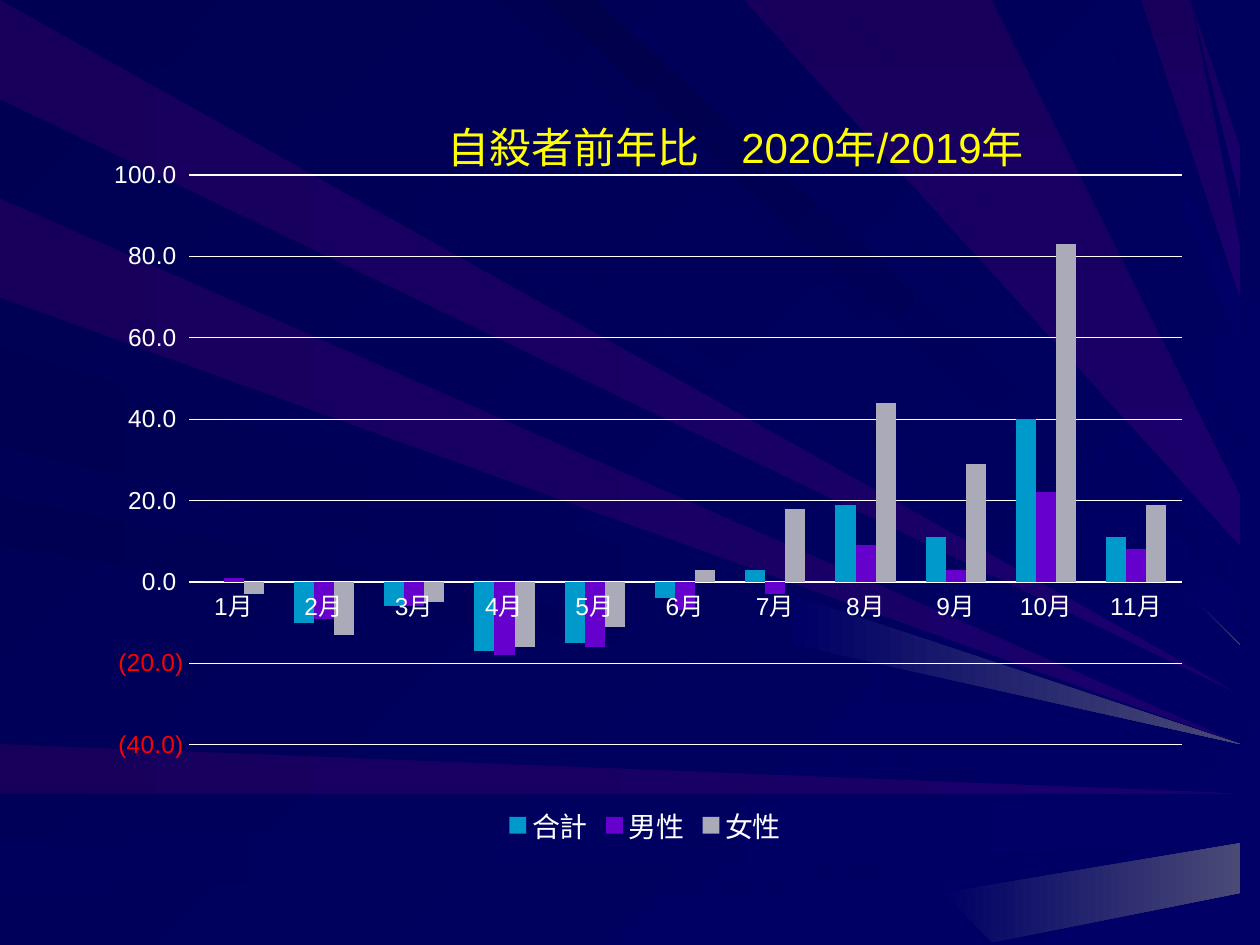
from lxml.etree import SubElement
from pptx import Presentation
from pptx.chart.data import CategoryChartData
from pptx.dml.color import RGBColor
from pptx.enum.chart import XL_CHART_TYPE as ChartType, XL_LEGEND_POSITION as LegendPosition
from pptx.enum.chart import XL_TICK_MARK as TickMark
from pptx.oxml import parse_xml
from pptx.oxml.ns import nsdecls, qn
from pptx.util import Cm, Pt

TITLE = "自殺者前年比　2020年/2019年"
MONTHS = [f"{month}月" for month in range(1, 12)]
FONT = "Arial"
WHITE = RGBColor.from_string("FFFFFF")
YELLOW = RGBColor.from_string("FFFF00")
BLUE = RGBColor.from_string("0099CC")
PURPLE = RGBColor.from_string("6600CC")
GREY = RGBColor.from_string("AAAAB8")
INK = RGBColor.from_string("00004B")
NIGHT = RGBColor.from_string("000052")
DUSK = RGBColor.from_string("00005C")
NAVY = RGBColor.from_string("000066")
PLUM = RGBColor.from_string("16005C")
VIOLET = RGBColor.from_string("1A006C")
HAZE = RGBColor.from_string("4A4A77")

CHANGES = [
    ("合計", BLUE, (0, -10, -6, -17, -15, -4, 3, 19, 11, 40, 11)),
    ("男性", PURPLE, (1, -9, -6, -18, -16, -7, -3, 9, 3, 22, 8)),
    ("女性", GREY, (-3, -13, -5, -16, -11, 3, 18, 44, 29, 83, 19)),
]

WIDTH, HEIGHT = 25.4, 19.05
# Each ray: colour, its span in cm on the starting edge, its span in cm on the right edge.
RAYS = {
    "left": [
        (PLUM, 0.05, 2.36, 14.45, 14.48),
        (PLUM, 4.04, 5.79, 14.83, 14.86),
        (PLUM, 15.14, 15.82, 16.03, 16.05),
        (DUSK, 16.89, 17.88, 16.33, 16.54),
        (DUSK, 18.67, 19.05, 16.81, 16.82),
        (INK, 6.55, 6.86, 14.95, 14.96),
        (NIGHT, 7.06, 8.69, 15.14, 15.29),
        (NIGHT, 9.5, 11.1, 15.37, 15.39),
        (DUSK, 14.02, 14.22, 15.77, 15.82),
    ],
    "top": [
        (NIGHT, 0.66, 2.57, 14.27, 14.3),
        (NIGHT, 10.11, 10.57, 13.08, 13.23),
        (INK, 10.82, 12.5, 12.17, 12.88),
        (INK, 13.72, 14.02, 11.75, 11.76),
        (PLUM, 15.39, 16.79, 11.3, 11.33),
        (PLUM, 22.53, 23.62, 4.65, 6.02),
        (PLUM, 23.85, 24.49, 2.9, 4.24),
        (INK, 5.72, 6.27, 13.89, 14.02),
        (DUSK, 14.66, 14.94, 11.51, 11.53),
        (PLUM, 17.42, 19.56, 9.91, 10.87),
        (NIGHT, 19.94, 20.12, 8.99, 9.14),
        (DUSK, 20.7, 20.93, 8.51, 8.53),
        (DUSK, 21.97, 22.15, 6.32, 6.55),
    ],
}
# Each tip: starting edge, the four spans of its ray, the share left dark on either side.
HAZY_TIPS = [
    ("bottom", 9.25, 18.85, 17.07, 17.63, 0.62, 0.23),
    ("top", 10.11, 10.57, 13.08, 13.23, 0.9, 0.9),
    ("left", 7.19, 8.81, 15.27, 15.39, 0.63, 0.63),
]


def start_point(edge, place):
    return {"left": (0, place), "top": (place, 0), "bottom": (place, HEIGHT)}[edge]


def along(start, end, share):
    return tuple(a + (b - a) * share for a, b in zip(start, end))


def paint(fill, start, end, angle):
    fill.gradient()
    fill.gradient_angle = (360 - angle) % 360
    for stop, color in zip(fill.gradient_stops, (start, end)):
        stop.color.rgb = color


def draw_ray(edge, near, far, upper, lower, colors, angle, skip=(0, 0)):
    if edge == "top":
        near, far = far, near
    ends = [(WIDTH, upper), (WIDTH, lower)]
    starts = [
        along(start_point(edge, place), end, share)
        for place, end, share in zip((near, far), ends, skip)
    ]
    corners = [starts[0], *ends, starts[1]]
    outline = slide.shapes.build_freeform(*corners[0], scale=Cm(1))
    outline.add_line_segments(corners[1:], close=True)
    ray = outline.convert_to_shape()
    ray.shadow.inherit = False
    ray.line.fill.background()
    paint(ray.fill, *colors, angle)


def style(font, size, color=WHITE):
    font.name, font.size, font.bold = FONT, Pt(size), False
    font.color.rgb = color


def draw_line(line):
    line.color.rgb = WHITE
    line.width = Pt(0.75)


def set_layout(parent, position, **settings):
    layout = parent.find(qn("c:layout"))
    if layout is None:
        layout = parse_xml(f"<c:layout {nsdecls('c')}/>")
        parent.insert(position, layout)
    manual = SubElement(layout, qn("c:manualLayout"))
    for tag, value in settings.items():
        SubElement(manual, qn(f"c:{tag}")).set("val", str(value))


deck = Presentation()
deck.slide_width, deck.slide_height = Cm(WIDTH), Cm(HEIGHT)
slide = deck.slides.add_slide(deck.slide_layouts[6])
paint(slide.background.fill, NIGHT, NAVY, 45)

for edge, rays in RAYS.items():
    for color, *spans in rays:
        violet = color == PLUM
        angle = 0 if edge == "left" else 90 if violet else 45
        draw_ray(edge, *spans, (color, VIOLET if violet else NAVY), angle)
for edge, *spans, upper_share, lower_share in HAZY_TIPS:
    draw_ray(edge, *spans, (NAVY, HAZE), 0, (upper_share, lower_share))

changes = CategoryChartData(number_format="0")
changes.categories = MONTHS
for name, color, values in CHANGES:
    changes.add_series(name, values)
chart = slide.shapes.add_chart(
    ChartType.COLUMN_CLUSTERED, Cm(1.5), Cm(0.74), Cm(23.01), Cm(16.41), changes
).chart
style(chart.font, 10)

heading = chart.chart_title
heading.text_frame.text = TITLE
style(heading.text_frame.paragraphs[0].runs[0].font, 24, YELLOW)
heading.include_in_layout = False
set_layout(heading._element, 1, xMode="edge", yMode="edge", x=0.32, y=0.08)
set_layout(chart._chartSpace.chart.plotArea, 0, layoutTarget="inner",
           xMode="edge", yMode="edge", x=0.1, y=0.17, w=0.87, h=0.7)

columns = chart.plots[0]
columns.gap_width, columns.overlap = 150, 0
columns.vary_by_categories = False
for series, (name, color, values) in zip(columns.series, CHANGES):
    series.invert_if_negative = False
    series.format.fill.solid()
    series.format.fill.fore_color.rgb = color

months, percent = chart.category_axis, chart.value_axis
for axis in (months, percent):
    axis.major_tick_mark = axis.minor_tick_mark = TickMark.NONE
    style(axis.tick_labels.font, 14)
draw_line(months.format.line)
percent.format.line.fill.background()
percent.minimum_scale, percent.maximum_scale, percent.major_unit = -40, 100, 20
percent.has_major_gridlines = True
draw_line(percent.major_gridlines.format.line)
percent.tick_labels.number_format = r"0.0_);[Red]\(0.0\)"
percent.tick_labels.number_format_is_linked = False

chart.has_legend = True
chart.legend.position = LegendPosition.BOTTOM
chart.legend.include_in_layout = False
style(chart.legend.font, 16)

deck.save("out.pptx")
